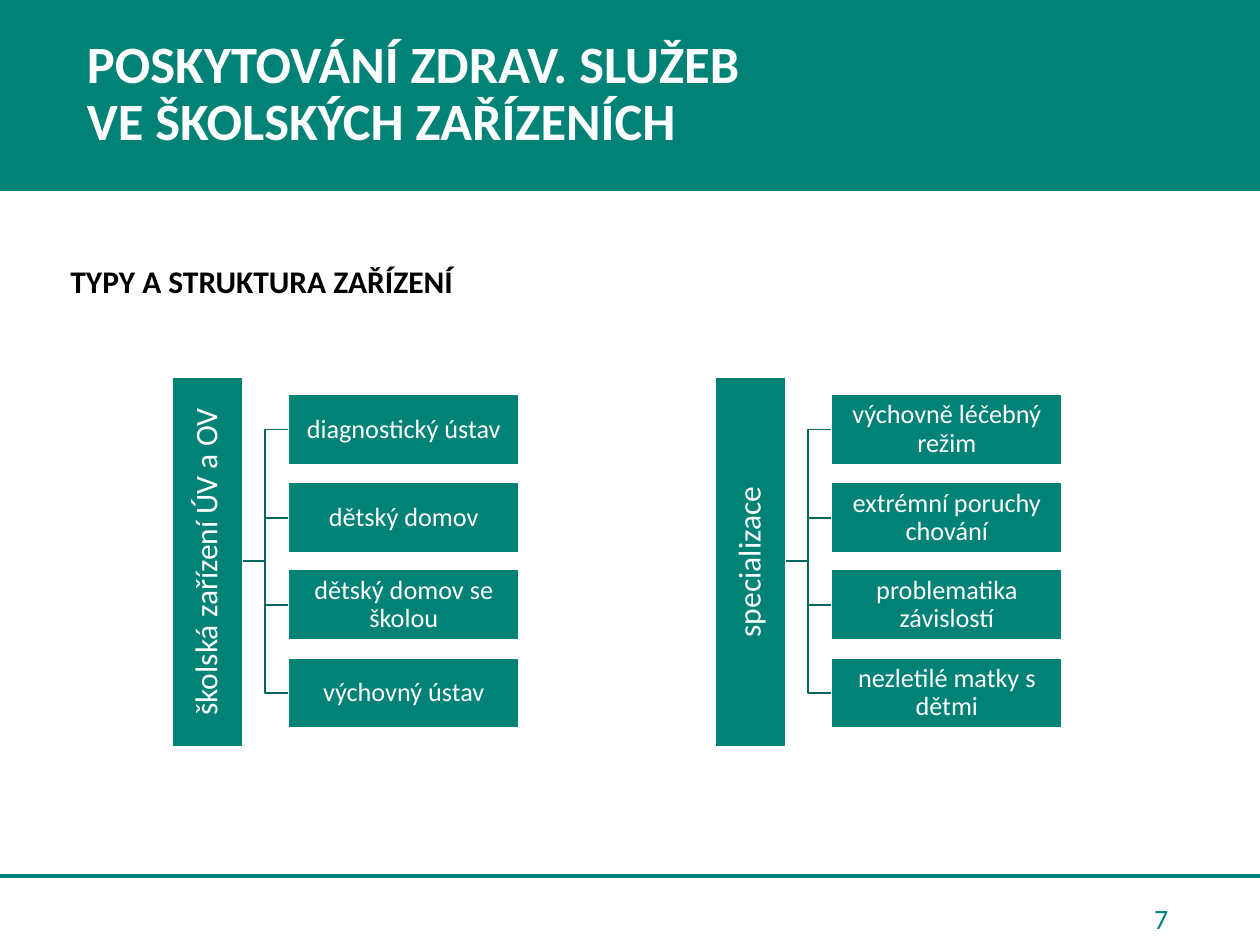
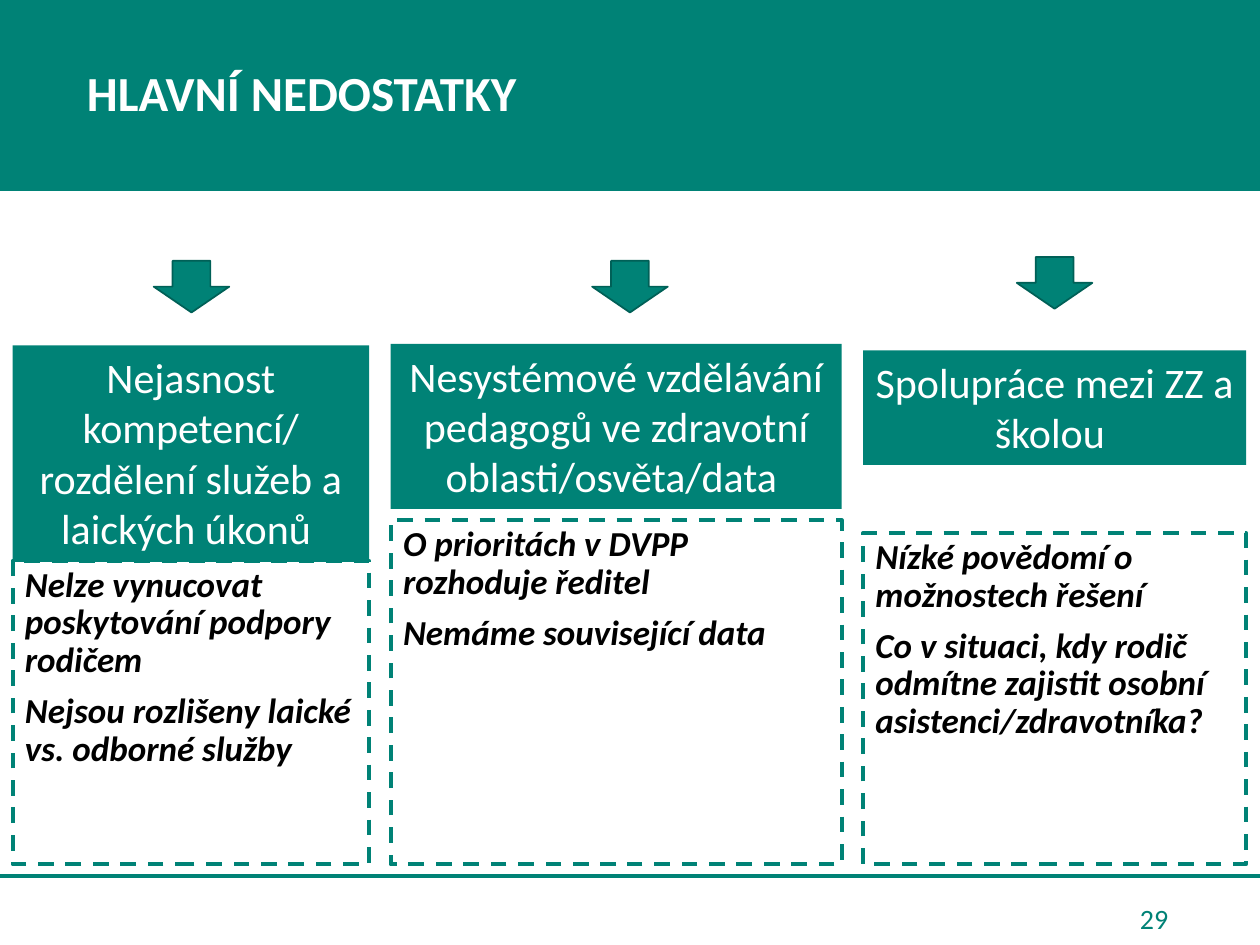
"""Build two slides on health services in school facilities."""
from dataclasses import dataclass

from pptx import Presentation
from pptx.dml.color import RGBColor
from pptx.enum.dml import MSO_LINE
from pptx.enum.shapes import MSO_CONNECTOR, MSO_SHAPE
from pptx.enum.text import MSO_ANCHOR, MSO_AUTO_SIZE, PP_ALIGN
from pptx.oxml.ns import qn
from pptx.presentation import Presentation as PresentationType
from pptx.shapes.autoshape import Shape
from pptx.slide import Slide
from pptx.text.text import TextFrame
from pptx.util import Emu, Pt

EMU_PER_PX = 9144
TITLE_ONLY = 5
FONT = "Calibri"
TEAL = "008276"
BRANCH_TEAL = "00685E"
ARROW_EDGE = "006057"
WHITE = "FFFFFF"
BLACK = "000000"

TREE_MIDDLE = 445
SPINE_LENGTH = 293
BOX_HEIGHT = 56
LEAF_WIDTH = 183
FIRST_LEAF_TOP = 313
LEAF_STEP = 69.67
COLUMN_BOTTOM = 686


@dataclass(frozen=True)
class Box:
    left: int
    top: int
    width: int
    height: int


@dataclass(frozen=True)
class TextStyle:
    size: int
    color: str
    bold: bool = False
    italic: bool = False
    align: PP_ALIGN = PP_ALIGN.LEFT
    anchor: MSO_ANCHOR = MSO_ANCHOR.TOP
    line_spacing: float = 1.0
    gap: float = 0


@dataclass(frozen=True)
class Tree:
    left: int
    root: str
    leaves: tuple[str, ...]


@dataclass(frozen=True)
class Shortcoming:
    arrow_left: int
    arrow_top: int
    heading_box: Box
    heading: tuple[str, ...]
    details_top: int
    details: tuple[str, ...]


ROOT_STYLE = TextStyle(18, WHITE, align=PP_ALIGN.CENTER, anchor=MSO_ANCHOR.MIDDLE, line_spacing=0.9)
LEAF_STYLE = TextStyle(15, WHITE, align=PP_ALIGN.CENTER, anchor=MSO_ANCHOR.MIDDLE, line_spacing=0.9)
HEADING_STYLE = TextStyle(24, WHITE, align=PP_ALIGN.CENTER)
DETAILS_STYLE = TextStyle(20, BLACK, bold=True, italic=True, line_spacing=0.9, gap=7.5)
NUMBER_STYLE = TextStyle(16, TEAL, align=PP_ALIGN.RIGHT, anchor=MSO_ANCHOR.MIDDLE)
SUBTITLE_STYLE = TextStyle(18, BLACK, bold=True)

TREES = (
    Tree(18, "školská zařízení ÚV a OV",
         ("diagnostický ústav", "dětský domov", "dětský domov se školou", "výchovný ústav")),
    Tree(449, "specializace",
         ("výchovně léčebný režim", "extrémní poruchy chování",
          "problematika závislostí", "nezletilé matky s dětmi")),
)

SHORTCOMINGS = (
    Shortcoming(122, 207, Box(10, 274, 283, 172),
                ("Nejasnost kompetencí/", "rozdělení služeb a laických úkonů "), 445,
                ("Nelze vynucovat poskytování podpory rodičem",
                 "Nejsou rozlišeny laické vs. odborné služby")),
    Shortcoming(470, 207, Box(310, 273, 358, 131),
                ("Nesystémové vzdělávání pedagogů ve zdravotní oblasti/osvěta/data ",), 413,
                ("O prioritách v DVPP rozhoduje ředitel", "Nemáme související data")),
    Shortcoming(807, 204, Box(685, 278, 304, 91),
                ("Spolupráce mezi ZZ a školou ",), 423,
                ("Nízké povědomí o možnostech řešení",
                 "Co v situaci, kdy rodič odmítne zajistit osobní asistenci/zdravotníka?")),
)


def px(length: float) -> Emu:
    """Turn pixels into EMU."""
    return Emu(round(length * EMU_PER_PX))


def rgb(color: str) -> RGBColor:
    """Turn a hex string into a colour."""
    return RGBColor.from_string(color)


def corners(box: Box) -> tuple[Emu, Emu, Emu, Emu]:
    """Return a box as left, top, width and height in EMU."""
    return px(box.left), px(box.top), px(box.width), px(box.height)


def write_text(frame: TextFrame, lines: tuple[str, ...], style: TextStyle) -> None:
    """Fill a text frame with one paragraph per line."""
    frame.text = "\n".join(lines)
    frame.word_wrap = True
    frame.vertical_anchor = style.anchor
    for index, paragraph in enumerate(frame.paragraphs):
        paragraph.alignment = style.align
        paragraph.line_spacing = style.line_spacing
        paragraph.space_before = Pt(style.gap if index else 0)
        for run in paragraph.runs:
            run.font.name = FONT
            run.font.size = Pt(style.size)
            run.font.bold = style.bold
            run.font.italic = style.italic
            run.font.color.rgb = rgb(style.color)


def add_box(slide: Slide, box: Box, fill: str | None, line: str | None = None,
            line_width: float = 1, kind: MSO_SHAPE = MSO_SHAPE.RECTANGLE) -> Shape:
    """Add a flat preset shape."""
    shape = slide.shapes.add_shape(kind, *corners(box))
    shape.shadow.inherit = False
    if fill:
        shape.fill.solid()
        shape.fill.fore_color.rgb = rgb(fill)
    else:
        shape.fill.background()
    if line:
        shape.line.color.rgb = rgb(line)
        shape.line.width = Pt(line_width)
    else:
        shape.line.fill.background()
    return shape


def add_label(slide: Slide, box: Box, text: str, style: TextStyle) -> None:
    """Add a one-paragraph text box."""
    label = slide.shapes.add_textbox(*corners(box))
    write_text(label.text_frame, (text,), style)


def add_base_slide(presentation: PresentationType, title: str, title_size: int, number: int) -> Slide:
    """Add a slide with the title band, footer rule and slide number."""
    slide = presentation.slides.add_slide(presentation.slide_layouts[TITLE_ONLY])
    band = add_box(slide, Box(0, 0, 1004, 151), TEAL, TEAL)
    rule = slide.shapes.add_connector(MSO_CONNECTOR.STRAIGHT, px(-3), px(695), px(1004), px(695))
    rule.line.color.rgb = rgb(TEAL)
    rule.line.width = Pt(2.25)
    rule.element.spPr.append(rule.element.makeelement(qn("a:effectLst"), {}))

    heading = slide.shapes.title
    heading.left, heading.top, heading.width, heading.height = corners(Box(0, 0, 1000, 151))
    heading.text_frame.auto_size = MSO_AUTO_SIZE.NONE
    heading.text_frame.margin_left = px(69)
    style = TextStyle(title_size, WHITE, bold=True, anchor=MSO_ANCHOR.MIDDLE, line_spacing=0.9)
    write_text(heading.text_frame, (title,), style)
    heading.element.addprevious(rule.element)
    heading.element.addprevious(band.element)

    add_label(slide, Box(708, 709, 229, 40), str(number), NUMBER_STYLE)
    return slide


def add_branch(slide: Slide, left: int, leaf_middle: float) -> None:
    """Draw the elbow line from a tree's root to one leaf."""
    builder = slide.shapes.build_freeform(px(left), px(TREE_MIDDLE))
    builder.add_line_segments(
        [(px(left + 18.5), px(TREE_MIDDLE)), (px(left + 18.5), px(leaf_middle)),
         (px(left + 37), px(leaf_middle))], close=False)
    branch = builder.convert_to_shape()
    branch.shadow.inherit = False
    branch.fill.background()
    branch.line.color.rgb = rgb(BRANCH_TEAL)
    branch.line.width = Pt(1)


def add_node(slide: Slide, box: Box, text: str, style: TextStyle) -> Shape:
    """Add a tree node with narrow margins."""
    node = add_box(slide, box, TEAL, WHITE)
    frame = node.text_frame
    frame.margin_left = frame.margin_right = frame.margin_top = frame.margin_bottom = px(1)
    write_text(frame, (text,), style)
    return node


def add_tree(slide: Slide, tree: Tree) -> None:
    """Draw a turned root box, its branches and its leaves."""
    leaf_tops = [round(FIRST_LEAF_TOP + index * LEAF_STEP) for index in range(len(tree.leaves))]
    for top in leaf_tops:
        add_branch(slide, tree.left + 174, top + BOX_HEIGHT / 2)
    root_box = Box(tree.left, TREE_MIDDLE - BOX_HEIGHT // 2 + 1, SPINE_LENGTH, BOX_HEIGHT)
    add_node(slide, root_box, tree.root, ROOT_STYLE).rotation = 270
    for top, leaf in zip(leaf_tops, tree.leaves):
        add_node(slide, Box(tree.left + 211, top, LEAF_WIDTH, BOX_HEIGHT), leaf, LEAF_STYLE)


def add_shortcoming(slide: Slide, item: Shortcoming) -> None:
    """Draw one column: arrow, heading and dashed details box."""
    add_box(slide, Box(item.arrow_left, item.arrow_top, 60, 41), TEAL, ARROW_EDGE,
            kind=MSO_SHAPE.DOWN_ARROW)
    heading = add_box(slide, item.heading_box, TEAL)
    write_text(heading.text_frame, item.heading, HEADING_STYLE)
    heading.text_frame.auto_size = MSO_AUTO_SIZE.SHAPE_TO_FIT_TEXT
    details_box = Box(item.heading_box.left, item.details_top, item.heading_box.width,
                      COLUMN_BOTTOM - item.details_top)
    details = add_box(slide, details_box, None, TEAL, 2.25)
    details.line.dash_style = MSO_LINE.DASH
    write_text(details.text_frame, item.details, DETAILS_STYLE)


def main() -> None:
    """Build and save the presentation."""
    presentation = Presentation()
    presentation.slide_width, presentation.slide_height = px(1000), px(750)

    facilities = add_base_slide(
        presentation, "POSKYTOVÁNÍ ZDRAV. SLUŽEB\vVE ŠKOLSKÝCH ZAŘÍZENÍCH", 30, 7)
    add_label(facilities, Box(46, 203, 392, 40), "TYPY A STRUKTURA ZAŘÍZENÍ", SUBTITLE_STYLE)
    for tree in TREES:
        add_tree(facilities, tree)

    shortcomings = add_base_slide(presentation, "HLAVNÍ NEDOSTATKY", 28, 29)
    for item in SHORTCOMINGS:
        add_shortcoming(shortcomings, item)

    presentation.save("out.pptx")


if __name__ == "__main__":
    main()
